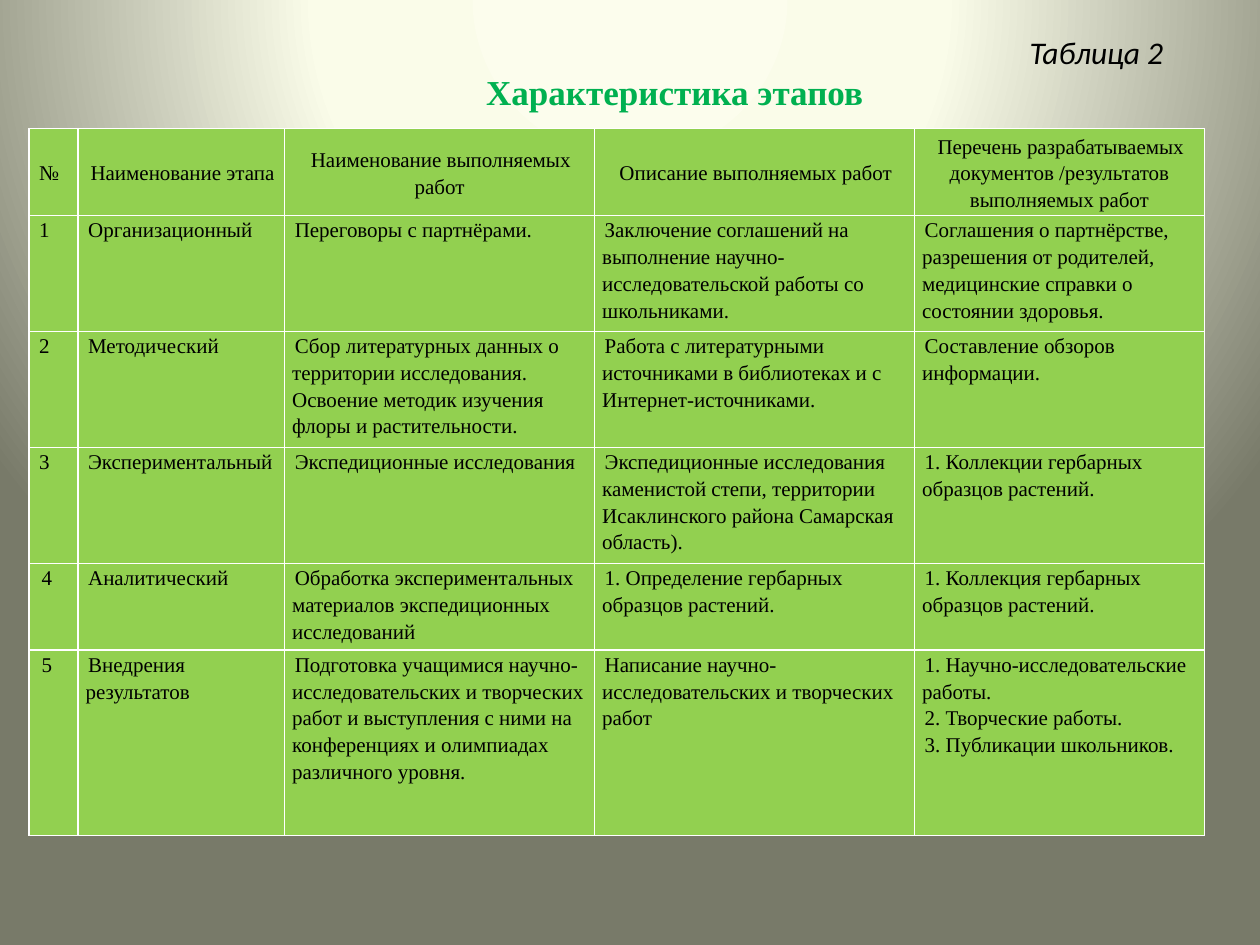
from dataclasses import dataclass

from lxml import etree
from pptx import Presentation
from pptx.dml.color import RGBColor
from pptx.enum.text import MSO_ANCHOR, MSO_AUTO_SIZE, PP_ALIGN
from pptx.oxml import parse_xml
from pptx.oxml.ns import nsdecls, qn
from pptx.util import Inches, Pt

LEFT, CENTER, RIGHT = PP_ALIGN.LEFT, PP_ALIGN.CENTER, PP_ALIGN.RIGHT
TOP, MIDDLE = MSO_ANCHOR.TOP, MSO_ANCHOR.MIDDLE
GROW = MSO_AUTO_SIZE.SHAPE_TO_FIT_TEXT


@dataclass(frozen=True)
class Theme:
    ink: str = "000000"
    heading: str = "00B050"
    cell: str = "92D050"
    border: str = "FFFFFF"
    glow: tuple = ((0, "FCFDED"), (40, "FAFCE9"), (100, "787A69"))
    caption_font: str = "Calibri"
    body_font: str = "Times New Roman"
    caption_size: int = 18
    heading_size: int = 20
    body_size: int = 12
    border_width: int = 1
    line_spacing: float = 1.15
    first_indent: float = 0.02
    cell_margin: float = 0.06


def write_text(paragraph, text, font, size, color, align=LEFT, bold=False,
               italic=False, spacing=None, margin=0, indent=0):
    paragraph.alignment = align
    paragraph.line_spacing = spacing
    properties = paragraph._p.get_or_add_pPr()
    properties.set("marL", str(Inches(margin)))
    properties.set("indent", str(Inches(indent)))
    run = paragraph.add_run()
    run.text = text
    run.font.name, run.font.size = font, Pt(size)
    run.font.bold, run.font.italic = bold, italic
    run.font.color.rgb = RGBColor.from_string(color)


class SlideBuilder:
    """Draws themed elements on a slide, with lengths in percent of its size."""

    def __init__(self, presentation, theme):
        self.theme = theme
        self.width, self.height = presentation.slide_width, presentation.slide_height
        self.slide = presentation.slides.add_slide(presentation.slide_layouts[6])

    def across(self, percent):
        return round(self.width * percent / 100)

    def down(self, percent):
        return round(self.height * percent / 100)

    def background(self):
        stops = "".join(
            f'<a:gs pos="{position * 1000}"><a:srgbClr val="{color}"/></a:gs>'
            for position, color in self.theme.glow)
        self.slide.element.cSld.insert(0, parse_xml(
            f'<p:bg {nsdecls("p", "a")}><p:bgPr><a:gradFill rotWithShape="1">'
            f'<a:gsLst>{stops}</a:gsLst><a:path path="circle">'
            '<a:fillToRect l="50000" t="-80000" r="50000" b="180000"/></a:path>'
            '</a:gradFill><a:effectLst/></p:bgPr></p:bg>'))

    def title(self, left, top, width, height, caption, heading):
        theme = self.theme
        box = self.slide.shapes.add_textbox(
            self.across(left), self.down(top), self.across(width), self.down(height))
        frame = box.text_frame
        frame.word_wrap, frame.auto_size = True, GROW
        write_text(frame.paragraphs[0], caption, theme.caption_font,
                   theme.caption_size, theme.ink, align=RIGHT, italic=True)
        write_text(frame.add_paragraph(), heading, theme.body_font,
                   theme.heading_size, theme.heading, align=CENTER, bold=True)

    def borders(self, cell):
        properties = cell._tc.get_or_add_tcPr()
        for side in ("a:lnL", "a:lnR", "a:lnT", "a:lnB"):
            line = etree.SubElement(properties, qn(side), w=str(Pt(self.theme.border_width)))
            fill = etree.SubElement(line, qn("a:solidFill"))
            etree.SubElement(fill, qn("a:srgbClr"), val=self.theme.border)

    def cell(self, cell, text, align=LEFT, anchor=TOP, margin=0):
        theme = self.theme
        self.borders(cell)
        cell.fill.solid()
        cell.fill.fore_color.rgb = RGBColor.from_string(theme.cell)
        cell.margin_left = cell.margin_right = Inches(theme.cell_margin)
        cell.margin_top = cell.margin_bottom = 0
        cell.vertical_anchor = anchor
        frame = cell.text_frame
        for number, line in enumerate(text.split("\n")):
            paragraph = frame.add_paragraph() if number else frame.paragraphs[0]
            write_text(paragraph, line, theme.body_font, theme.body_size, theme.ink,
                       align=align, spacing=theme.line_spacing, margin=margin,
                       indent=theme.first_indent)

    def table(self, left, top, widths, heights, header, stages):
        table = self.slide.shapes.add_table(
            len(heights), len(widths), self.across(left), self.down(top),
            self.across(sum(widths)), self.down(sum(heights))).table
        table.first_row = table.horz_banding = False
        for column, width in zip(table.columns, widths):
            column.width = self.across(width)
        for row, height in zip(table.rows, heights):
            row.height = self.down(height)
        for column, label in enumerate(header):
            self.cell(table.cell(0, column), label, CENTER if column else LEFT, MIDDLE)
        for number, stage in enumerate(stages, 1):
            shift = self.theme.first_indent if number > 3 else 0
            self.cell(table.cell(number, 0), str(number), margin=shift)
            for column, text in enumerate(stage, 1):
                self.cell(table.cell(number, column), text)


HEADER = ("№", "Наименование этапа", "Наименование выполняемых работ",
          "Описание выполняемых работ",
          "Перечень разрабатываемых документов /результатов выполняемых работ")
STAGES = (
    ("Организационный", "Переговоры с партнёрами.",
     "Заключение соглашений на выполнение научно-исследовательской работы со школьниками.",
     "Соглашения о партнёрстве, разрешения от родителей, медицинские справки "
     "о состоянии здоровья."),
    ("Методический",
     "Сбор литературных данных о территории исследования. "
     "Освоение методик изучения флоры и растительности.",
     "Работа с литературными источниками в библиотеках и с Интернет-источниками.",
     "Составление обзоров информации."),
    ("Экспериментальный", "Экспедиционные исследования",
     "Экспедиционные исследования каменистой степи, территории "
     "Исаклинского района Самарская область).",
     "1. Коллекции гербарных образцов растений."),
    ("Аналитический",
     "Обработка экспериментальных материалов экспедиционных исследований",
     "1. Определение гербарных образцов растений.",
     "1. Коллекция гербарных образцов растений."),
    ("Внедрения результатов",
     "Подготовка учащимися научно-исследовательских и творческих работ "
     "и выступления с ними на конференциях и олимпиадах различного уровня.",
     "Написание научно-исследовательских и творческих работ",
     "1. Научно-исследовательские работы.\n2. Творческие работы.\n"
     "3. Публикации школьников."),
)


def main():
    presentation = Presentation()
    presentation.slide_width, presentation.slide_height = Inches(10), Inches(7.5)
    builder = SlideBuilder(presentation, Theme())
    builder.background()
    builder.title(13.8, 2.8, 79.5, 9.87, "Таблица 2", "Характеристика этапов")
    builder.table(2.3, 13.6, widths=(3.9, 16.4, 24.6, 25.4, 23),
                  heights=(9.2, 12.27, 12.27, 12.27, 9.2, 19.6),
                  header=HEADER, stages=STAGES)
    presentation.save("out.pptx")


if __name__ == "__main__":
    main()
